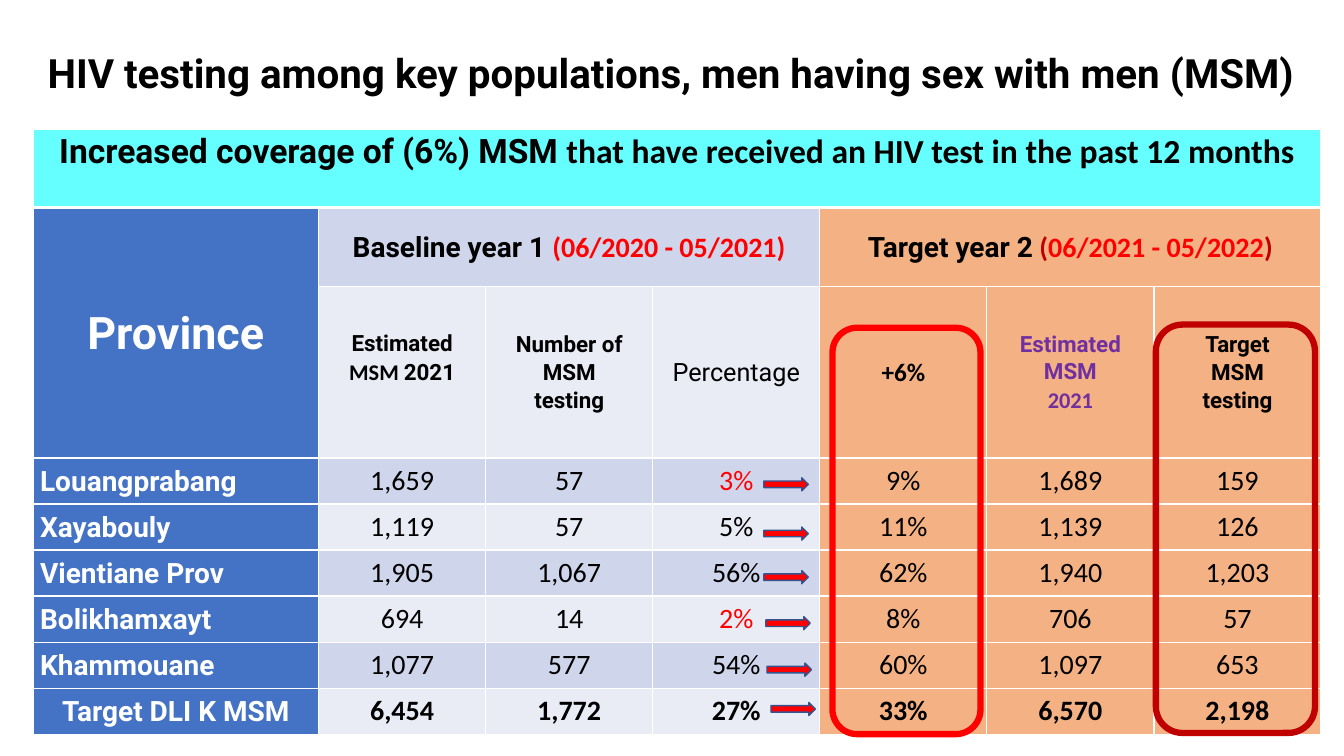
"""Builds a slide on HIV testing coverage by province."""
from dataclasses import dataclass
from typing import NamedTuple

from lxml.etree import SubElement
from pptx import Presentation
from pptx.dml.color import RGBColor
from pptx.enum.shapes import MSO_SHAPE as Preset
from pptx.enum.text import MSO_ANCHOR as Anchor, PP_ALIGN as Align
from pptx.oxml.ns import qn
from pptx.util import Cm, Pt


@dataclass(frozen=True)
class Theme:
    """Colours, fonts and type sizes of the slide."""
    black: str = "000000"
    white: str = "FFFFFF"
    red: str = "FF0000"
    dark_red: str = "C00000"
    purple: str = "7030A0"
    cyan: str = "66FFFF"
    blue: str = "4472C4"
    arrow_edge: str = "325491"
    orange: str = "F4B183"
    bands: tuple[str, str] = ("E9EBF5", "CFD5EA")
    heading: str = "Roboto"
    body: str = "Calibri"
    title_size: float = 28.8
    province_size: float = 32
    banner_size: float = 24
    base_size: float = 20
    percent_size: float = 18
    label_size: float = 16
    spacing: float = 1.07


THEME = Theme()


class Span(NamedTuple):
    """A stretch of text in one style."""
    text: str
    size: float = THEME.base_size
    font: str = THEME.heading
    color: str = THEME.black
    bold: bool = True


class Label(NamedTuple):
    """A header cell: its place, its paragraphs and the cells it covers."""
    row: int
    column: int
    lines: list[list[Span]]
    rows: int = 1
    columns: int = 1
    anchor: Anchor = Anchor.MIDDLE
    bottom: float = 0


class Mark(NamedTuple):
    """A preset shape drawn over the table."""
    preset: Preset
    left: float
    top: float
    width: float
    height: float
    line: str
    weight: float
    fill: str | None = None


def small(text: str, font: str = THEME.heading, color: str = THEME.black) -> Span:
    """Return a span in the size of the column labels."""
    return Span(text, THEME.label_size, font, color)


COLUMN_WIDTHS = [7.2] + [4.21] * 6
ROW_HEIGHTS = [1.98, 1.98, 4.33] + [1.16] * 6
TABLE_LEFT, TABLE_TOP = 0.83, 3.25
FIRST_DATA_ROW = 3
FIRST_TARGET_COLUMN = 4

TITLE = Span("HIV testing among key populations, men having sex with men (MSM)", THEME.title_size)

LABELS = [
    Label(0, 0, [[Span("Increased coverage of (6%) MSM ", THEME.banner_size),
                  Span("that have received an HIV test in the past 12 months",
                       THEME.banner_size, THEME.body)]], columns=7, anchor=Anchor.TOP),
    Label(1, 0, [[Span("Province", THEME.province_size, color=THEME.white)]], rows=2),
    Label(1, 1, [[Span("Baseline year 1 "),
                  Span("(06/2020 - 05/2021)", font=THEME.body, color=THEME.red)]], columns=3),
    Label(1, 4, [[Span("Target year 2"),
                  Span(" (", font=THEME.body, color=THEME.dark_red),
                  Span("06/2021 - 05/2022", font=THEME.body, color=THEME.red),
                  Span(")", font=THEME.body, color=THEME.dark_red)]], columns=3),
    Label(2, 1, [[small("Estimated")], [small("MSM ", THEME.body), small("2021")]], bottom=0.72),
    Label(2, 2, [[small("Number of MSM")], [small("testing")]]),
    Label(2, 3, [[Span("Percentage", THEME.percent_size, bold=False)]]),
    Label(2, 4, [[Span("+6%", THEME.percent_size, THEME.body)]]),
    Label(2, 5, [[small("Estimated MSM", color=THEME.purple)],
                 [small("2021", THEME.body, THEME.purple)]]),
    Label(2, 6, [[small("Target")], [small("MSM")], [small("testing")]]),
]

PROVINCES = [
    ("Louangprabang", "1,659", "57", "3%", "9%", "1,689", "159"),
    ("Xayabouly", "1,119", "57", "5%", "11%", "1,139", "126"),
    ("Vientiane Prov", "1,905", "1,067", "56%", "62%", "1,940", "1,203"),
    ("Bolikhamxayt", "694", "14", "2%", "8%", "706", "57"),
    ("Khammouane", "1,077", "577", "54%", "60%", "1,097", "653"),
    ("Target DLI K MSM", "6,454", "1,772", "27%", "33%", "6,570", "2,198"),
]
LOW_COVERAGE = {"3%", "2%"}

ARROW_PLACES = [(19.25, 12.04), (19.25, 13.28), (19.25, 14.38),
                (19.3, 15.54), (19.33, 16.71), (19.43, 17.7)]
MARKS = [
    Mark(Preset.ROUNDED_RECTANGLE, 20.98, 8.26, 3.73, 10.24, THEME.red, 4.5),
    Mark(Preset.ROUNDED_RECTANGLE, 29.13, 8.18, 4.01, 10.29, THEME.dark_red, 4.5),
] + [Mark(Preset.RIGHT_ARROW, left, top, 1.12, 0.33, THEME.arrow_edge, 1, THEME.red)
     for left, top in ARROW_PLACES]


def write(frame, lines: list[list[Span]], align: Align = Align.CENTER,
          spacing: float = THEME.spacing) -> None:
    """Fill a text frame with styled paragraphs."""
    frame.text = "\n".join(line[0].text for line in lines)
    for para, line in zip(frame.paragraphs, lines):
        para.alignment, para.line_spacing = align, spacing
        for span in line[1:]:
            para.add_run().text = span.text
        for run, span in zip(para.runs, line):
            run.font.name, run.font.size, run.font.bold = span.font, Pt(span.size), span.bold
            run.font.color.rgb = RGBColor.from_string(span.color)


def set_margins(box, side: float = 0, bottom: float = 0) -> None:
    """Set the inner margins of a cell or text frame."""
    box.margin_left = box.margin_right = Cm(side)
    box.margin_top, box.margin_bottom = 0, Cm(bottom)


def cell_color(row: int, column: int) -> str:
    """Return the fill that belongs to a table position."""
    if row == 0:
        return THEME.cyan
    if column == 0:
        return THEME.blue
    return THEME.orange if column >= FIRST_TARGET_COLUMN else THEME.bands[row % 2]


def paint_cell(cell, row: int, column: int) -> None:
    """Give a cell its white borders and its fill."""
    properties = cell._tc.get_or_add_tcPr()
    for side in "LRTB":
        thick = (row, side) in {(0, "B"), (1, "T")}
        border = SubElement(properties, qn(f"a:ln{side}"), w=str(Pt(3 if thick else 1)))
        SubElement(SubElement(border, qn("a:solidFill")), qn("a:srgbClr"), val=THEME.white)
    cell.fill.solid()
    cell.fill.fore_color.rgb = RGBColor.from_string(cell_color(row, column))
    cell.vertical_anchor = Anchor.MIDDLE
    set_margins(cell)


def add_title(page) -> None:
    """Add the slide title."""
    box = page.shapes.add_textbox(Cm(0.81), Cm(0.3), Cm(32.2), Cm(2.95))
    frame = box.text_frame
    frame.word_wrap, frame.vertical_anchor = True, Anchor.MIDDLE
    set_margins(frame)
    write(frame, [[TITLE]])


def add_province_table(page) -> None:
    """Add the table of baseline and target figures."""
    table = page.shapes.add_table(
        len(ROW_HEIGHTS), len(COLUMN_WIDTHS), Cm(TABLE_LEFT), Cm(TABLE_TOP),
        Cm(sum(COLUMN_WIDTHS)), Cm(sum(ROW_HEIGHTS))).table
    for column, width in zip(table.columns, COLUMN_WIDTHS):
        column.width = Cm(width)
    for row, height in enumerate(ROW_HEIGHTS):
        table.rows[row].height = Cm(height)
        for column in range(len(COLUMN_WIDTHS)):
            paint_cell(table.cell(row, column), row, column)
    for label in LABELS:
        cell = table.cell(label.row, label.column)
        if label.rows * label.columns > 1:
            cell.merge(table.cell(label.row + label.rows - 1, label.column + label.columns - 1))
        cell.vertical_anchor = label.anchor
        set_margins(cell, 0.18, label.bottom)
        write(cell.text_frame, label.lines)
    for row, (name, *figures) in enumerate(PROVINCES, FIRST_DATA_ROW):
        total = row == len(ROW_HEIGHTS) - 1
        cell = table.cell(row, 0)
        set_margins(cell, 0.18)
        write(cell.text_frame, [[Span(name, color=THEME.white)]],
              Align.CENTER if total else Align.LEFT)
        for column, figure in enumerate(figures, 1):
            color = THEME.red if figure in LOW_COVERAGE else THEME.black
            span = Span(figure, font=THEME.body, color=color, bold=total)
            write(table.cell(row, column).text_frame, [[span]], spacing=1.0)


def add_mark(page, mark: Mark) -> None:
    """Draw one frame or arrow."""
    shape = page.shapes.add_shape(mark.preset, Cm(mark.left), Cm(mark.top),
                                  Cm(mark.width), Cm(mark.height))
    shape.shadow.inherit = False
    shape.line.color.rgb, shape.line.width = RGBColor.from_string(mark.line), Pt(mark.weight)
    if mark.fill:
        shape.fill.solid()
        shape.fill.fore_color.rgb = RGBColor.from_string(mark.fill)
    else:
        shape.fill.background()


def main() -> None:
    """Build the deck and save it."""
    deck = Presentation()
    deck.slide_width, deck.slide_height = Cm(33.87), Cm(19.05)
    page = deck.slides.add_slide(deck.slide_layouts[6])
    add_title(page)
    add_province_table(page)
    for mark in MARKS:
        add_mark(page, mark)
    deck.save("out.pptx")


if __name__ == "__main__":
    main()
